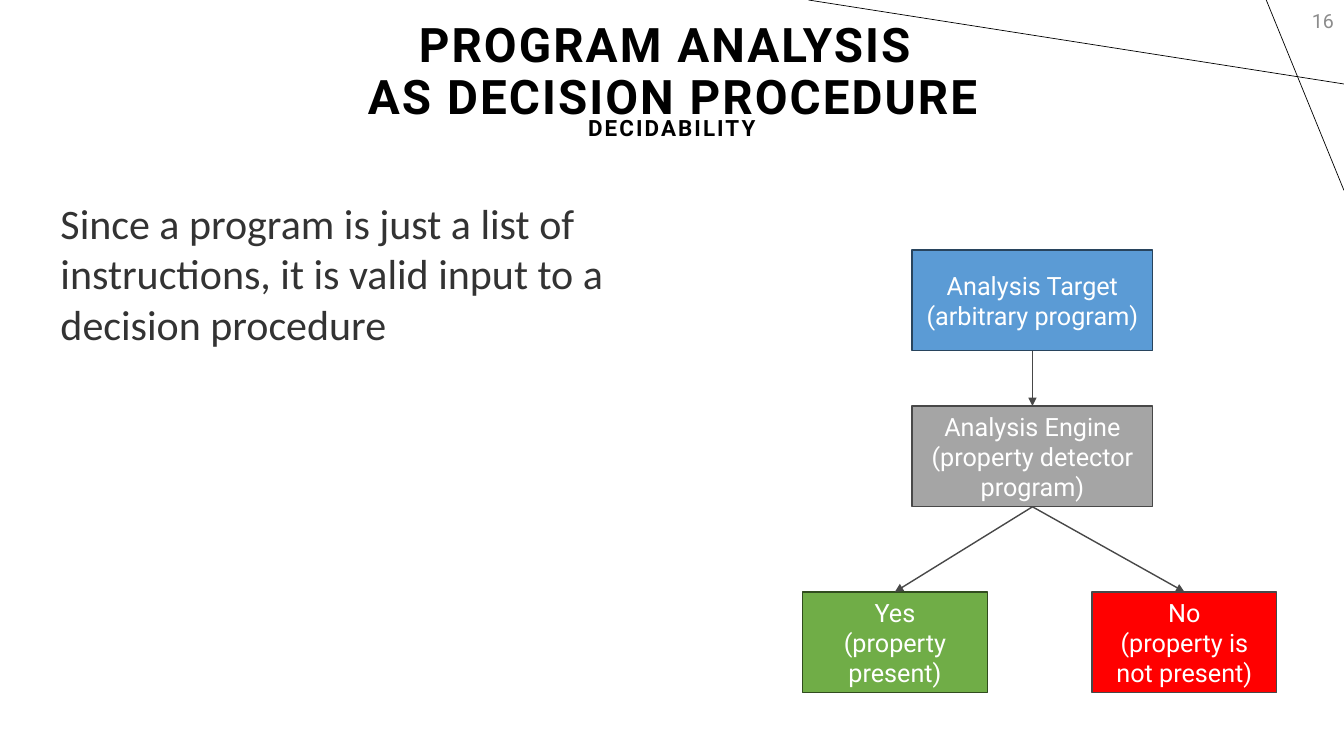
from lxml.etree import SubElement
from pptx import Presentation
from pptx.dml.color import RGBColor
from pptx.enum.shapes import MSO_CONNECTOR, MSO_SHAPE
from pptx.enum.text import MSO_ANCHOR, MSO_AUTO_SIZE, PP_ALIGN
from pptx.oxml.ns import qn
from pptx.util import Pt

COLORS = {
    "black": "000000", "white": "FFFFFF", "body": "333333", "number": "8C8C8C",
    "outline": "484848", "target": "5B9BD5", "target_outline": "28445D",
    "engine": "A5A5A5", "yes": "70AD47", "yes_outline": "314C1F", "no": "FF0000",
}
HEADING = {"name": "Roboto", "bold": True}
LABEL = {"name": "Roboto", "size": Pt(18)}
CENTERED = {"alignment": PP_ALIGN.CENTER}
HEADING_PARAGRAPH = {**CENTERED, "line_spacing": 0.9}
MIDDLE = {"word_wrap": True, "auto_size": MSO_AUTO_SIZE.NONE,
          "vertical_anchor": MSO_ANCHOR.MIDDLE}
BODY_FRAME = {"word_wrap": True, "auto_size": MSO_AUTO_SIZE.SHAPE_TO_FIT_TEXT,
              "vertical_anchor": MSO_ANCHOR.TOP}
BOX_HEIGHT = 72


def rgb(color):
    return RGBColor.from_string(COLORS[color])


def apply(target, values):
    for name, value in values.items():
        setattr(target, name, value)


def place(shape, left, top, width, height):
    apply(shape, {"left": Pt(left), "top": Pt(top),
                  "width": Pt(width), "height": Pt(height)})


def write(shape, lines, color, font, paragraph_format, frame_format, tracking=0):
    """Fill a shape with one paragraph per line; tracking is in points."""
    frame = shape.text_frame
    frame.text = "\n".join(lines)
    apply(frame, frame_format)
    for paragraph in frame.paragraphs:
        apply(paragraph, paragraph_format)
        for run in paragraph.runs:
            apply(run.font, font)
            run.font.color.rgb = rgb(color)
            if tracking:
                run.font._element.set("spc", str(int(tracking * 100)))


def add_text(slide, at, *text):
    caption = slide.shapes.add_textbox(*map(Pt, at))
    write(caption, *text)


def add_box(slide, center, top, width, lines, fill, outline="outline"):
    box = slide.shapes.add_shape(MSO_SHAPE.RECTANGLE, Pt(center - width / 2),
                                 Pt(top), Pt(width), Pt(BOX_HEIGHT))
    box.shadow.inherit = False
    box.fill.solid()
    box.fill.fore_color.rgb = rgb(fill)
    box.line.color.rgb = rgb(outline)
    box.line.width = Pt(1)
    write(box, lines, "white", LABEL, CENTERED, MIDDLE)
    return box


def add_line(slide, ends, color, width):
    line = slide.shapes.add_connector(MSO_CONNECTOR.STRAIGHT, *map(Pt, ends))
    line.line.color.rgb = rgb(color)
    line.line.width = Pt(width)
    SubElement(line._element.spPr, qn("a:effectLst"))
    return line


def add_arrow(slide, upper, lower):
    """Point from the bottom of one box to the top of another."""
    arrow = add_line(slide, (0, 0, 0, 0), "outline", 1)
    arrow.begin_connect(upper, 2)
    arrow.end_connect(lower, 0)
    outline = arrow._element.spPr.find(qn("a:ln"))
    SubElement(outline, qn("a:tailEnd"), type="triangle")


def remove_bullet(paragraph):
    properties = paragraph._p.get_or_add_pPr()
    for name in ("marL", "indent"):
        properties.set(name, "0")
    SubElement(properties, qn("a:buNone"))


def main():
    presentation = Presentation()
    presentation.slide_width, presentation.slide_height = Pt(960), Pt(540)
    slide = presentation.slides.add_slide(presentation.slide_layouts[1])

    for ends in ((960, 60, 577.5, 0), (904.5, 0, 960, 136)):
        add_line(slide, ends, "black", 0.5)

    title, body = slide.placeholders
    place(title, 1.5, 0, 958.5, 104.5)
    write(title, ["PROGRAM ANALYSIS \vAS DECISION PROCEDURE"], "black",
          {**HEADING, "size": Pt(34)}, HEADING_PARAGRAPH, MIDDLE, 1.5)
    add_text(slide, (744, 0, 216, 29), ["16"], "number",
             {"name": "Roboto", "size": Pt(14)},
             {"alignment": PP_ALIGN.RIGHT}, MIDDLE)
    add_text(slide, (0.75, 40.25, 958.5, 104.5), ["DECIDABILITY"], "black",
             {**HEADING, "size": Pt(16)}, HEADING_PARAGRAPH, MIDDLE, 1.5)

    place(body, 36, 137.5, 467, 116.5)
    write(body, ["Since a program is just a list of instructions, "
                 "it is valid input to a decision procedure"], "body",
          {"name": "Calibri", "size": Pt(30)}, {"space_before": Pt(0)}, BODY_FRAME)
    remove_bullet(body.text_frame.paragraphs[0])

    engine = add_box(slide, 737.5, 290, 172,
                     ["Analysis Engine", "(property detector program)"], "engine")
    target = add_box(slide, 737.5, 178.5, 172,
                     ["Analysis Target", "(arbitrary program)"],
                     "target", "target_outline")
    yes = add_box(slide, 639.25, 422.75, 132,
                  ["Yes", "(property present)"], "yes", "yes_outline")
    no = add_box(slide, 846, 422.75, 132,
                 ["No", "(property is not present)"], "no")
    for upper, lower in ((target, engine), (engine, yes), (engine, no)):
        add_arrow(slide, upper, lower)

    presentation.save("out.pptx")


if __name__ == "__main__":
    main()
